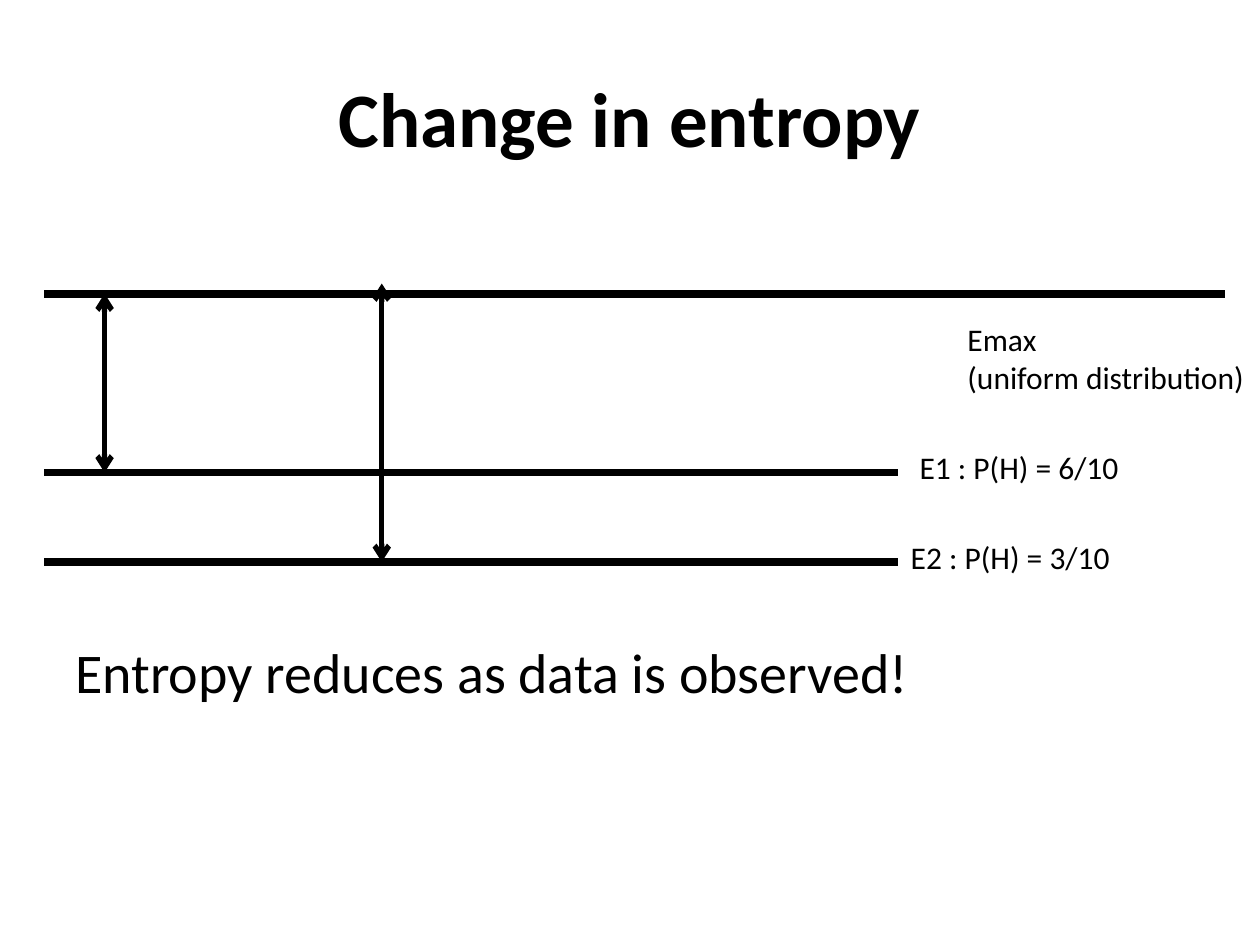
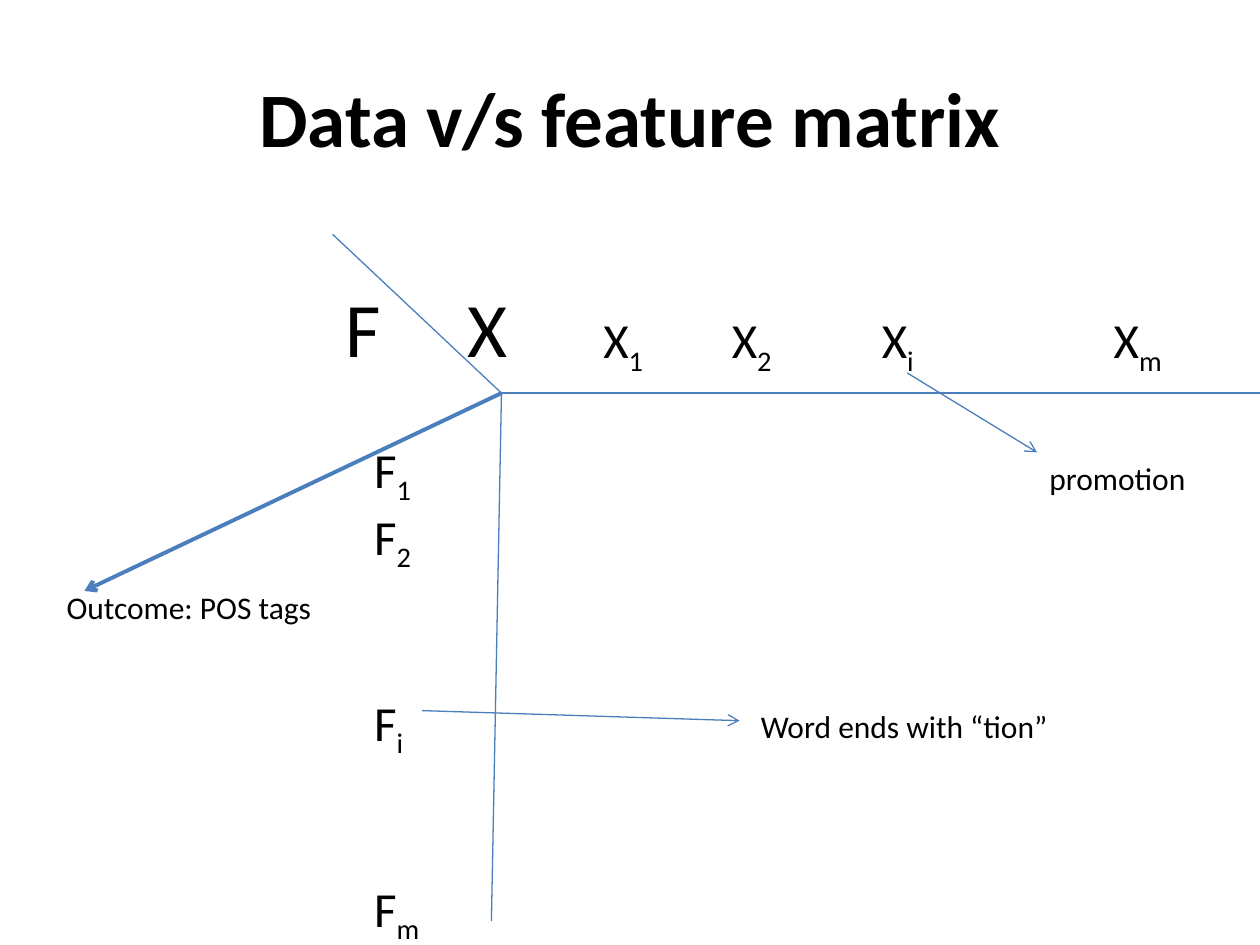
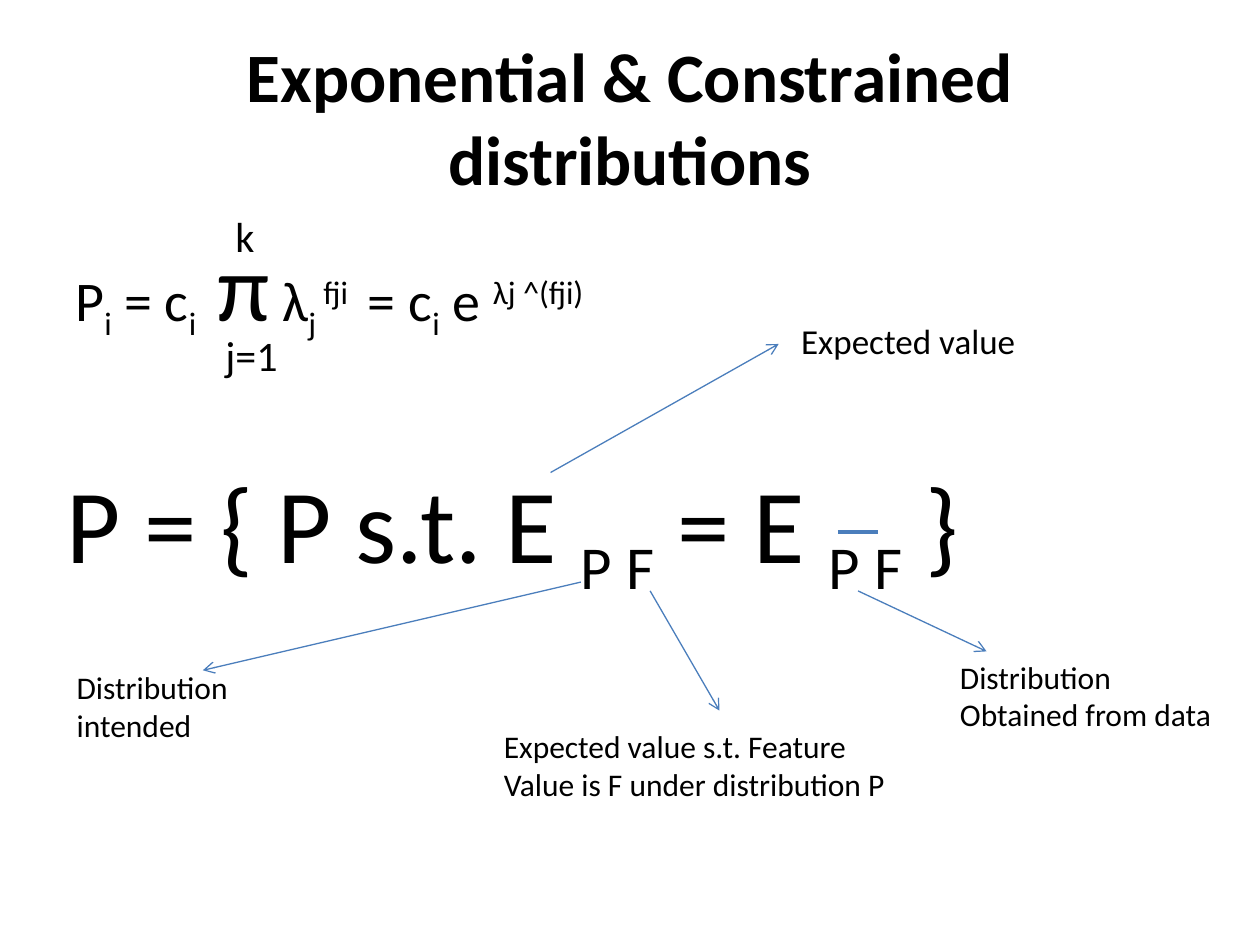
from lxml.etree import SubElement as Sub
from pptx import Presentation
from pptx.dml.color import RGBColor
from pptx.enum.shapes import MSO_CONNECTOR as Link
from pptx.enum.text import MSO_ANCHOR as Anchor, MSO_AUTO_SIZE as Auto, PP_ALIGN as Align
from pptx.oxml.ns import qn
from pptx.util import Inches, Pt

# Shared look
BLACK, BLUE = "000000", "4B7EBC"
FONT = "Calibri"
hue = RGBColor.from_string
BASE = {"_": "-25000", "~": "30000"}


def write(slide, box, paras, size=18, tabs=(), wrap=False, gaps=()):
    """Add text; runs split at |, with _ for subscript and ~ for superscript."""
    shape = slide.shapes.add_textbox(*map(Inches, box))
    frame = shape.text_frame
    frame.word_wrap = wrap
    frame.auto_size = Auto.NONE if wrap else Auto.SHAPE_TO_FIT_TEXT
    for n, text in enumerate(paras):
        para = frame.paragraphs[0] if n == 0 else frame.add_paragraph()
        if gaps:
            para.space_before = Pt(gaps[n])
        if tabs:
            stops = Sub(para._p.get_or_add_pPr(), qn("a:tabLst"))
            for tab in tabs:
                Sub(stops, qn("a:tab"), pos=str(Inches(tab)), algn="l")
        for part in text.split("|"):
            run = para.add_run()
            run.text = part.lstrip("_~")
            for key, val in {"name": FONT, "size": Pt(size)}.items():
                setattr(run.font, key, val)
            run.font.color.rgb = hue(BLACK)
            if part[0] in BASE:
                run._r.get_or_add_rPr().set("baseline", BASE[part[0]])
    return frame


def join(slide, ends, color=BLUE, width=0.75, tips=()):
    """Draw a straight line, with open arrows at the named tips."""
    line = slide.shapes.add_connector(Link.STRAIGHT, *map(Inches, ends))
    line.line.color.rgb = hue(color)
    line.line.width = Pt(width)
    for tip in tips:
        Sub(line.line._get_or_add_ln(), qn("a:" + tip), type="arrow")
    Sub(line._element.spPr, qn("a:effectLst"))


deck = Presentation()
deck.slide_width, deck.slide_height = Inches(10), Inches(7.5)

# Slides and titles
slides = []
for text, size in (
    ("Change in entropy", 44),
    ("Data v/s feature matrix", 44),
    ("Exponential & Constrained distributions", 39.6),
):
    slide = deck.slides.add_slide(deck.slide_layouts[5])
    title = slide.shapes.title
    place = {"left": 0.5, "top": 0.3, "width": 9, "height": 1.25}
    for key, val in place.items():
        setattr(title, key, Inches(val))
    frame = title.text_frame
    frame.text = text
    frame.vertical_anchor = Anchor.MIDDLE
    para = frame.paragraphs[0]
    para.alignment = Align.CENTER
    font = para.runs[0].font
    for key, val in {"name": FONT, "size": Pt(size), "bold": True}.items():
        setattr(font, key, val)
    font.color.rgb = hue(BLACK)
    slides.append(slide)
change, matrix, expo = slides

# Change in entropy: levels, drops and labels
for right, y in ((9.72, 2.33), (7.13, 3.75), (7.13, 4.46)):
    join(change, (0.35, y, right, y), BLACK, 4.5)
for x, top, low in ((0.83, 2.33, 3.75), (3.03, 2.25, 4.46)):
    join(change, (x, top, x, low), BLACK, 3, ("headEnd", "tailEnd"))
write(change, (7.58, 2.49, 2.42, 0.71), ["Emax", "(uniform distribution)"])
write(change, (7.2, 3.51, 1.8, 0.4), ["E1 : P(H) = 6/10"])
write(change, (7.13, 4.22, 1.8, 0.4), ["E2 : P(H) = 3/10"])
write(change, (0.5, 5.01, 9, 1.69), ["Entropy reduces as data is observed!"], 32, wrap=True)

# Feature matrix: axes from one corner
hub = (3.98, 3.12)
for end in ((2.64, 1.86), (3.9, 7.31), (10.04, 3.12)):
    join(matrix, hub + end)
join(matrix, hub + (0.67, 4.69), width=2.25, tips=["tailEnd"])

# Feature matrix: heads of columns and rows
write(matrix, (2.64, 2.18, 1.51, 0.84), ["F\tX"], 44, tabs=[0.97], wrap=True)
write(matrix, (4.69, 2.41, 4.77, 0.57), ["X|_1|\tX|_2|\tX|_i|\tX|_m"], 28,
      tabs=(1.02, 2.21, 4.05), wrap=True)
write(matrix, (2.87, 3.44, 2.05, 3.87), ["F|_1", "F|_2", "F|_i", "F|_m"], 28,
      gaps=(0, 0, 68, 68))

# Feature matrix: examples
for ends in ((7.2, 2.96, 8.23, 3.59), (3.35, 5.64, 5.87, 5.72)):
    join(matrix, ends, tips=["tailEnd"])
write(matrix, (8.23, 3.59, 1.3, 0.4), ["promotion"])
write(matrix, (5.94, 5.56, 2.5, 0.4), ["Word ends with “tion”"])
write(matrix, (0.43, 4.62, 2.16, 0.4), ["Outcome: POS tags"])

# Distributions: product formula with its limits
form = write(expo, (0.5, 1.75, 9, 4.95),
             ["P|_i| = c|_i| π| λ|_j |~fji | = c|_i| e |~λj ^(fji)"], 32, wrap=True)
form.paragraphs[0].runs[4].font.size = Pt(54)
write(expo, (1.69, 2.57, 0.62, 0.5), ["j=1"], 24)
write(expo, (1.77, 1.62, 0.33, 0.5), ["k"], 24)

# Distributions: constraint, with a bar over the second P
write(expo, (0.43, 3.59, 7.53, 1.11), ["P = { P s.t. E |_P F| = E |_P F| }"], 60)
join(expo, (6.65, 4.22, 6.97, 4.22), width=2.25)

# Distributions: notes and their arrows
for ends, box, size, text in (
    ((4.37, 3.75, 6.18, 2.73), (6.26, 2.49, 1.92, 0.44), 20, ["Expected value"]),
    ((6.81, 4.69, 7.83, 5.17), (7.52, 5.17, 2.22, 0.71), 18,
     ["Distribution", "Obtained from data"]),
    ((4.61, 4.62, 1.61, 5.32), (0.51, 5.25, 1.42, 0.71), 18,
     ["Distribution", "intended"]),
    ((5.16, 4.69, 5.71, 5.64), (3.9, 5.72, 3.27, 0.71), 18,
     ["Expected value s.t. Feature", "Value is F under distribution P"]),
):
    join(expo, ends, tips=["tailEnd"])
    write(expo, box, text, size)

deck.save("out.pptx")
